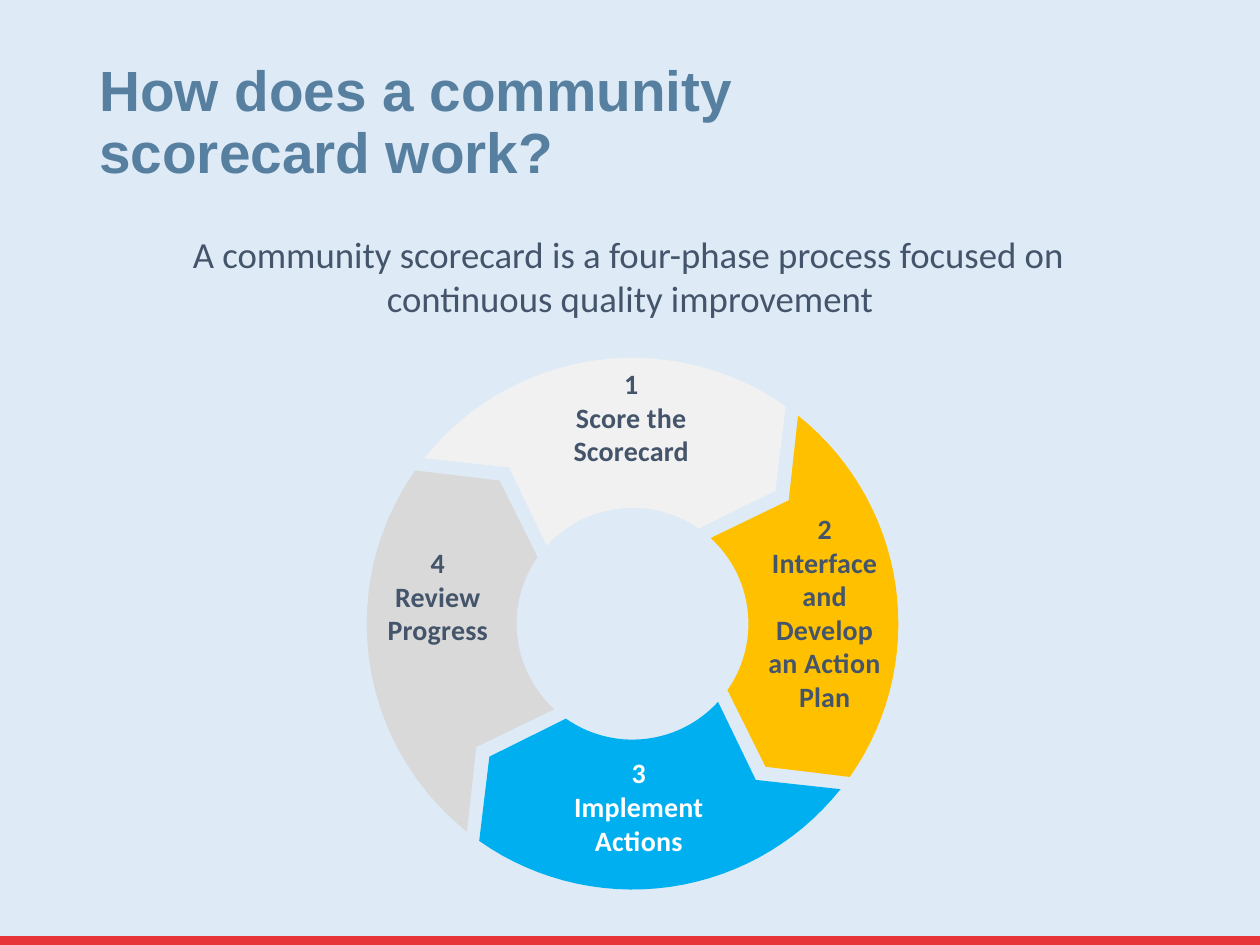
"""Build the community scorecard slide with its four-phase wheel."""
from math import cos, radians, sin

from pptx import Presentation
from pptx.dml.color import RGBColor
from pptx.enum.shapes import MSO_SHAPE
from pptx.enum.text import MSO_ANCHOR, PP_ALIGN
from pptx.util import Inches, Pt

SKY = RGBColor(0xDE, 0xEB, 0xF7)
RED = RGBColor(0xE7, 0x34, 0x39)
STEEL = RGBColor(0x57, 0x7F, 0x9F)
SLATE = RGBColor(0x44, 0x54, 0x6A)
WHITE = RGBColor(0xFF, 0xFF, 0xFF)
PALE = RGBColor(0xF1, 0xF1, 0xF1)
AMBER = RGBColor(0xFF, 0xC0, 0x00)
BLUE = RGBColor(0x00, 0xAF, 0xEF)
GREY = RGBColor(0xD9, 0xD9, 0xD9)

TITLE = {"name": "Arial", "size": Pt(32.4), "bold": True}
BODY = {"name": "Calibri", "size": Pt(21), "bold": False}
LABEL = {"name": "Calibri", "size": Pt(16), "bold": True}

CENTER_X, CENTER_Y = 5.02, 4.95
OUTER_RADIUS, INNER_RADIUS = 2.11, 0.92
ARC_STEPS = 30

PHASES = [
    (PALE, SLATE, (4.5, 2.9, 1.02, 0.82), "1", "Score the Scorecard"),
    (AMBER, SLATE, (6.05, 4.05, 0.99, 1.63), "2", "Interface and Develop an Action Plan"),
    (BLUE, WHITE, (4.5, 5.99, 1.14, 0.82), "3", "Implement Actions"),
    (GREY, SLATE, (2.86, 4.32, 1.23, 0.82), "4", "Review Progress"),
]


def polar(radius, angle):
    """Return the point at an angle in degrees around the wheel's centre."""
    return (Inches(CENTER_X + radius * cos(radians(angle))),
            Inches(CENTER_Y + radius * sin(radians(angle))))


def arc(radius, start, end):
    """Return evenly spaced points along an arc."""
    step = (end - start) / ARC_STEPS
    return [polar(radius, start + step * index) for index in range(ARC_STEPS + 1)]


class SlideBuilder:
    """Hold the current slide and draw its kinds of element."""

    def __init__(self, slide):
        """Start on a slide with the shared background."""
        self.slide = slide
        self.wheel = None
        slide.background.fill.solid()
        slide.background.fill.fore_color.rgb = SKY

    def paint(self, shape, color):
        """Give a shape a plain fill without line or shadow."""
        shape.shadow.inherit = False
        shape.fill.solid()
        shape.fill.fore_color.rgb = color
        shape.line.fill.background()

    def bar(self, box, color):
        """Add a plain rectangle."""
        lengths = [Inches(value) for value in box]
        self.paint(self.slide.shapes.add_shape(MSO_SHAPE.RECTANGLE, *lengths), color)

    def text(self, shapes, box, lines, style, color, paragraph_format, frame_format):
        """Add a wrapped text box with one paragraph for each line."""
        frame = shapes.add_textbox(*[Inches(value) for value in box]).text_frame
        for name, value in {"word_wrap": True, **frame_format}.items():
            setattr(frame, name, value)
        for index, line in enumerate(lines):
            paragraph = frame.add_paragraph() if index else frame.paragraphs[0]
            paragraph.text = line
            for name, value in paragraph_format.items():
                setattr(paragraph, name, value)
            for name, value in style.items():
                setattr(paragraph.font, name, value)
            paragraph.font.color.rgb = color
        return frame

    def segment(self, turn, color):
        """Add one arrow-shaped part of the wheel, turned by an angle."""
        points = [*arc(OUTER_RADIUS, 218.5 + turn, 305.2 + turn),
                  polar(1.55, 317.1 + turn),
                  *arc(INNER_RADIUS, 305 + turn, 222.4 + turn),
                  polar(1.58, 231.7 + turn)]
        builder = self.wheel.build_freeform(*points[0], scale=1.0)
        builder.add_line_segments(points[1:], close=True)
        self.paint(builder.convert_to_shape(), color)

    def phases(self, phases, frame_format):
        """Add the grouped wheel with its labels."""
        self.wheel = self.slide.shapes.add_group_shape().shapes
        for index, (fill, color, box, number, label) in enumerate(phases):
            self.segment(90 * index, fill)
            frame = self.text(self.wheel, box, [number, label], LABEL, color,
                              {"alignment": PP_ALIGN.CENTER}, frame_format)
            frame.paragraphs[1].runs[0].font._element.set("spc", "15")


def main():
    """Create and save the presentation."""
    presentation = Presentation()
    presentation.slide_width = Inches(10)
    presentation.slide_height = Inches(7.5)
    slide = presentation.slides.add_slide(presentation.slide_layouts[6])
    builder = SlideBuilder(slide)
    flush = {"margin_left": 0, "margin_right": 0,
             "margin_top": Inches(0.01), "margin_bottom": 0}

    builder.bar((0, 7.43, 10, 0.07), RED)
    builder.text(slide.shapes, (0.69, 0.45, 7.06, 1.07),
                 ["How does a community scorecard work?"], TITLE, STEEL,
                 {"line_spacing": 0.9}, {"vertical_anchor": MSO_ANCHOR.BOTTOM})
    intro = builder.text(slide.shapes, (1.52, 1.83, 6.95, 0.72),
                         ["A community scorecard is a four-phase process focused on "
                          "continuous quality improvement"], BODY, SLATE, {}, flush)
    properties = intro.paragraphs[0]._p.get_or_add_pPr()
    properties.set("marL", str(Inches(1.55)))
    properties.set("indent", str(Inches(-1.54)))
    builder.phases(PHASES, flush)
    presentation.save("out.pptx")


if __name__ == "__main__":
    main()
